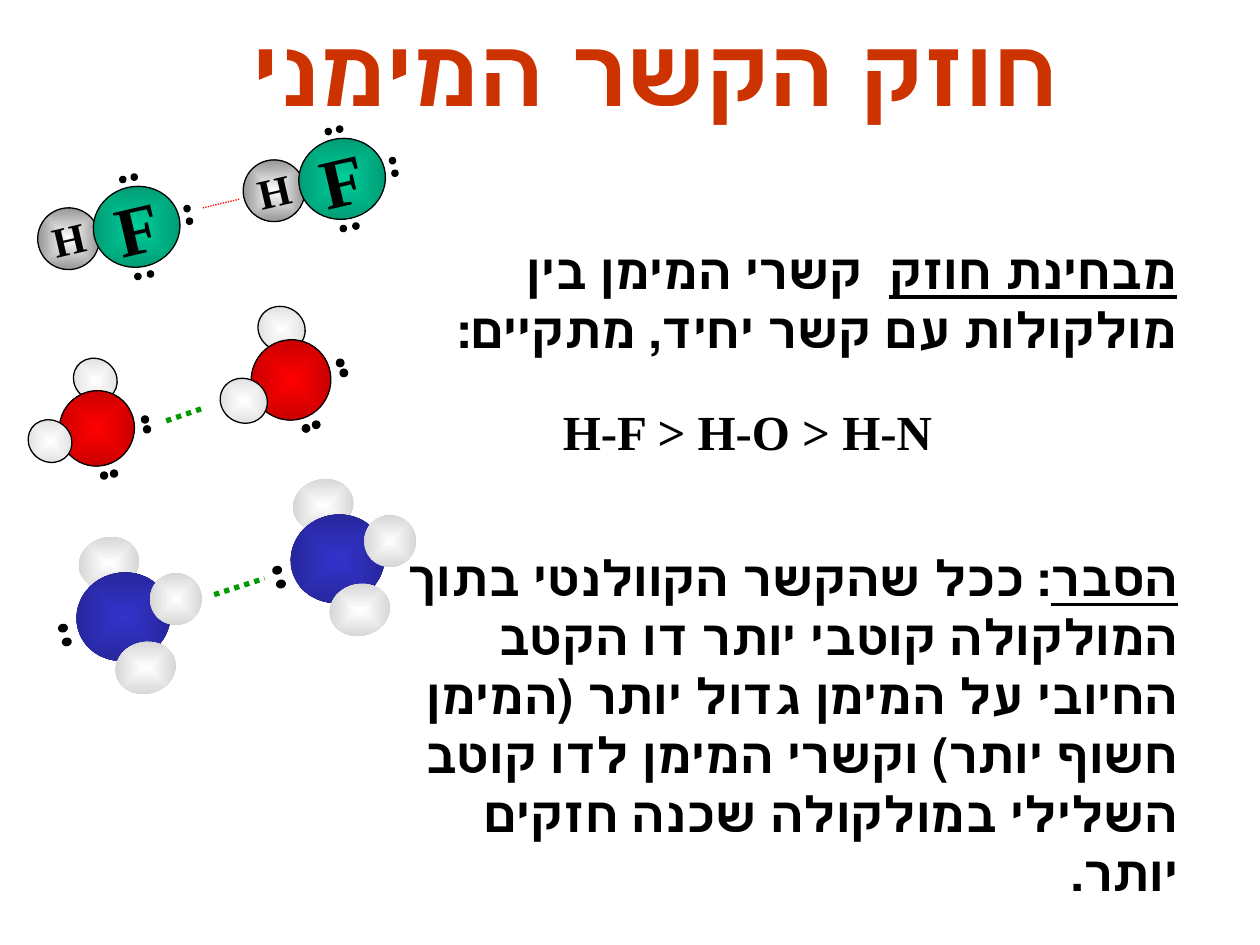
from math import cos, radians, sin

from lxml.etree import SubElement
from pptx import Presentation
from pptx.dml.color import RGBColor
from pptx.enum.dml import MSO_LINE
from pptx.enum.shapes import MSO_CONNECTOR, MSO_SHAPE
from pptx.enum.text import MSO_ANCHOR, MSO_AUTO_SIZE, PP_ALIGN
from pptx.oxml.ns import qn
from pptx.util import Pt

FONT = "Times New Roman"
COLORS = {"title": "CC3300", "ink": "000000", "bond": "009900", "thin_bond": "FF0000"}

# Atom kind: centre colour, rim colour, width, height, outlined, label, label size
ATOMS = {
    "H in HF": ("FFFFFF", "808080", 35.3, 35.3, True, "H", 24),
    "F": ("00CC99", "00926D", 49.7, 46.1, True, "F", 40),
    "H in water": ("FFFFFF", "D6D6D6", 25.2, 27.4, True, "", 0),
    "O": ("FF0000", "B60000", 46.1, 45.4, True, "", 0),
    "H in ammonia": ("FFFFFF", "CDCDCD", 29.5, 34.6, False, "", 0),
    "round H in ammonia": ("FFFFFF", "CDCDCD", 29.5, 29.5, False, "", 0),
    "N": ("3333CC", "242492", 50.4, 54, False, "", 0),
}

# Offsets from the central atom, back to front; copies: centre x, y, scale, turn
MOLECULES = [
    {
        "atoms": [("H in HF", -38.9, 6.8), ("F", 0, 0)],
        "electrons": [(-7.9, -27), (-1.4, -28.4), (28.8, -10.4),
                      (30.2, -3.2), (7.9, 27), (0.7, 28.4)],
        "electron_size": (3.6, 3.6),
        "rotation": 346.9,
        "copies": [(78.1, 129.6, 1, 0), (195.5, 102.2, 1, 0)],
        "bond": (115.9, 118.8, 136.8, 113.8, "thin_bond", 0.75),
    },
    {
        "atoms": [("H in water", -5.4, -29.2), ("O", 0, 0), ("H in water", -27, 11.9)],
        "electrons": [(8.6, 27.7), (14.4, 25.6), (30.2, -4), (28.1, -9.7)],
        "electron_size": (4.3, 4.3),
        "rotation": 297.3,
        "copies": [(166.3, 217.1, 1, 0), (55.4, 244.8, 0.94, 8.6)],
        "bond": (95, 240.5, 115.9, 233.3, "bond", 3),
    },
    {
        "atoms": [("H in ammonia", -8.3, -30.6), ("N", 0, 0),
                  ("round H in ammonia", 29.9, -10.1), ("H in ammonia", 12.6, 29.2)],
        "electrons": [(-32.4, 14.4), (-34.6, 6.5)],
        "electron_size": (4.3, 5),
        "rotation": 255.5,
        "copies": [(193, 319.3, 1, 0), (70.6, 352.4, 1, 0)],
        "bond": (122.4, 339.8, 151.2, 330.5, "bond", 3),
    },
]

TITLE = "חוזק הקשר המימני"
# Box, right to left, underlined lead, rest
TEXTS = [
    ((223.9, 133.9, 455.8, 74.2), True, "מבחינת חוזק",
     "  קשרי המימן בין מולקולות עם קשר יחיד, מתקיים:"),
    ((314.6, 226, 264.2, 41), False, "", "H-F > H-O > H-N"),
    ((206.6, 309.6, 473.8, 175.7), True, "הסבר",
     ": ככל שהקשר הקוולנטי בתוך המולקולה קוטבי יותר דו הקטב החיובי על המימן "
     "גדול יותר (המימן חשוף יותר) וקשרי המימן לדו קוטב השלילי במולקולה שכנה "
     "חזקים יותר."),
]


def rgb(name):
    return RGBColor.from_string(COLORS.get(name, name))


def format_paragraph(p, size, color, align, rtl=True):
    p.font.name, p.font.size, p.font.bold = FONT, Pt(size), True
    p.font.color.rgb = rgb(color)
    p.alignment = align
    if rtl:
        p._p.get_or_add_pPr().set("rtl", "1")


def add_ellipse(shapes, x, y, w, h, rotation, outlined=True):
    """Add an ellipse centred on x, y."""
    sp = shapes.add_shape(MSO_SHAPE.OVAL, Pt(x - w / 2), Pt(y - h / 2), Pt(w), Pt(h))
    sp.rotation = rotation
    sp.shadow.inherit = False
    if outlined:
        sp.line.color.rgb = rgb("ink")
        sp.line.width = Pt(0.75)
    else:
        sp.line.fill.background()
    return sp


def fill_radial(sp, inner, outer):
    sp.fill.gradient()
    for stop, color in zip(sp.fill.gradient_stops, (inner, outer)):
        stop.color.rgb = rgb(color)
    grad = sp._element.spPr.find(qn("a:gradFill"))
    grad.remove(grad.find(qn("a:lin")))
    radial = SubElement(grad, qn("a:path"), path="shape")
    SubElement(radial, qn("a:fillToRect"), dict.fromkeys("ltrb", "50000"))


def add_label(sp, text, size):
    tf = sp.text_frame
    tf.word_wrap = False
    tf.vertical_anchor = MSO_ANCHOR.MIDDLE
    p = tf.paragraphs[0]
    p.text = text
    format_paragraph(p, size, "ink", PP_ALIGN.CENTER)


def add_molecule(shapes, molecule, cx, cy, scale, turn):
    rotation = (molecule["rotation"] + turn) % 360
    c, s = scale * cos(radians(turn)), scale * sin(radians(turn))

    def place(dx, dy):
        return cx + dx * c - dy * s, cy + dx * s + dy * c

    for kind, dx, dy in molecule["atoms"]:
        inner, outer, w, h, outlined, label, size = ATOMS[kind]
        sp = add_ellipse(shapes, *place(dx, dy), w * scale, h * scale, rotation, outlined)
        fill_radial(sp, inner, outer)
        if label:
            add_label(sp, label, size)
    w, h = molecule["electron_size"]
    for offset in molecule["electrons"]:
        sp = add_ellipse(shapes, *place(*offset), w * scale, h * scale, rotation)
        sp.fill.solid()
        sp.fill.fore_color.rgb = rgb("ink")


def add_bond(shapes, x1, y1, x2, y2, color, width):
    line = shapes.add_connector(MSO_CONNECTOR.STRAIGHT, Pt(x1), Pt(y1), Pt(x2), Pt(y2))
    line.line.color.rgb = rgb(color)
    line.line.width = Pt(width)
    line.line.dash_style = MSO_LINE.ROUND_DOT
    SubElement(line._element.spPr, qn("a:effectLst"))


def add_text(shapes, box, rtl, lead, rest):
    tf = shapes.add_textbox(*map(Pt, box)).text_frame
    tf.word_wrap = True
    tf.auto_size = MSO_AUTO_SIZE.SHAPE_TO_FIT_TEXT
    p = tf.paragraphs[0]
    format_paragraph(p, 28, "ink", PP_ALIGN.RIGHT if rtl else PP_ALIGN.LEFT, rtl)
    if lead:
        r = p.add_run()
        r.text = lead
        r.font.underline = True
    p.add_run().text = rest


def set_title(title):
    title.left, title.top, title.width, title.height = Pt(0), Pt(-6), Pt(612), Pt(90)
    tf = title.text_frame
    tf.text = TITLE
    tf.auto_size = MSO_AUTO_SIZE.NONE
    tf.vertical_anchor = MSO_ANCHOR.MIDDLE
    format_paragraph(tf.paragraphs[0], 54, "title", PP_ALIGN.RIGHT)


def main():
    prs = Presentation()
    prs.slide_width, prs.slide_height = Pt(720), Pt(540)
    shapes = prs.slides.add_slide(prs.slide_layouts[5]).shapes
    set_title(shapes.title)
    for molecule in MOLECULES:
        for copy in molecule["copies"]:
            add_molecule(shapes, molecule, *copy)
        add_bond(shapes, *molecule["bond"])
    for text in TEXTS:
        add_text(shapes, *text)
    prs.save("out.pptx")


if __name__ == "__main__":
    main()
